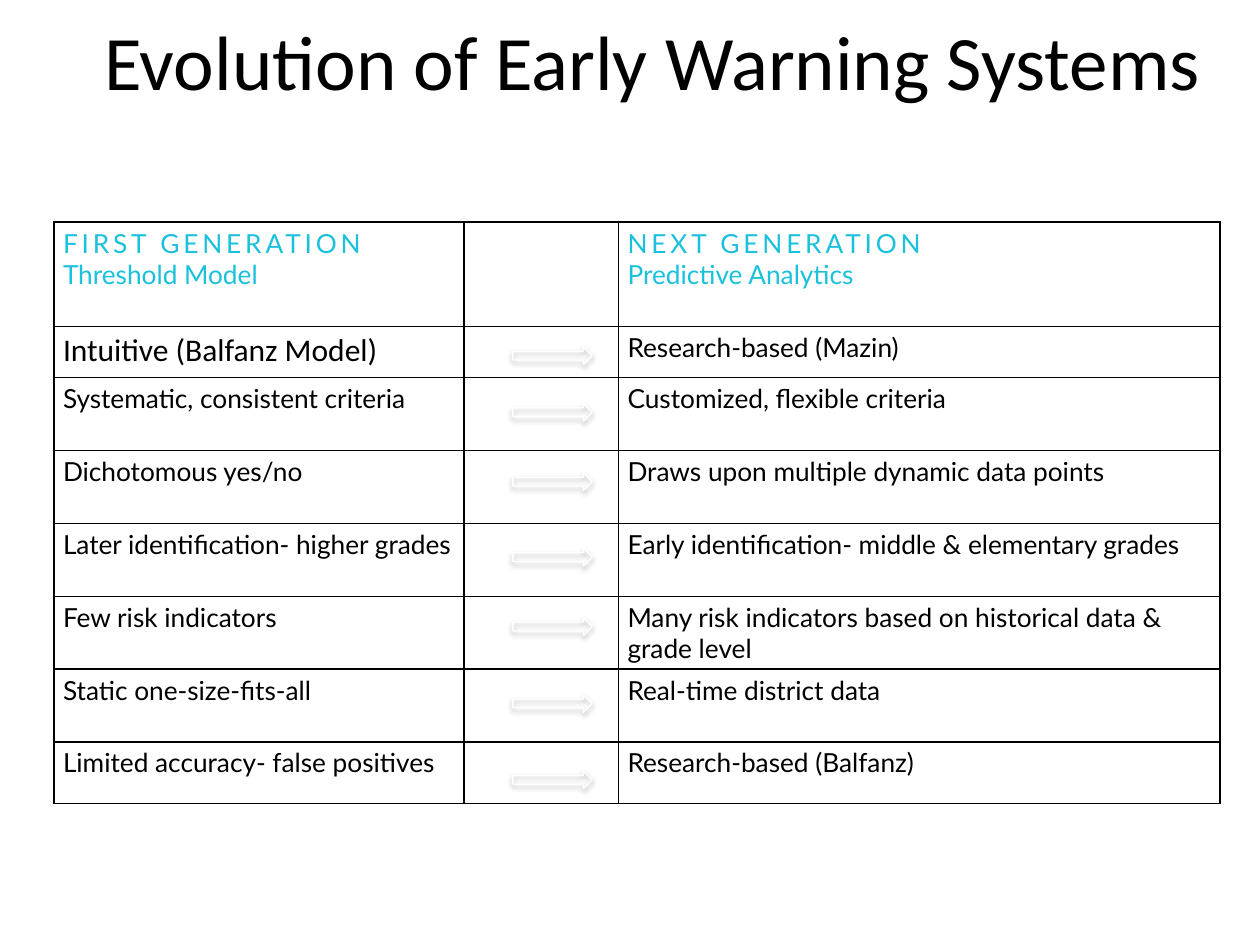
from lxml import etree
from pptx import Presentation
from pptx.dml.color import RGBColor
from pptx.enum.shapes import MSO_SHAPE
from pptx.enum.text import MSO_ANCHOR, PP_ALIGN
from pptx.oxml import parse_xml
from pptx.oxml.ns import nsdecls, qn
from pptx.util import Cm, Pt

ARROW = MSO_SHAPE.RIGHT_ARROW
CENTER = PP_ALIGN.CENTER
MIDDLE = MSO_ANCHOR.MIDDLE

TITLE = "Evolution of Early Warning Systems"
HEADINGS = [
    ("FIRST GENERATION", "Threshold Model"),
    ("NEXT GENERATION", "Predictive Analytics"),
]
# first generation, next generation, row height, arrow top
ROWS = [
    ("Intuitive (Balfanz Model)", "Research-based (Mazin)", 1.03, 6.99),
    ("Systematic, consistent criteria", "Customized, flexible criteria", 1.47, 8.13),
    ("Dichotomous yes/no", "Draws upon multiple dynamic data points", 1.47, 9.53),
    ("Later identification- higher grades",
     "Early identification- middle & elementary grades", 1.47, 11.05),
    ("Few risk indicators",
     "Many risk indicators based on historical data & grade level", 1.47, 12.45),
    ("Static one-size-fits-all", "Real-time district data", 1.47, 14),
    ("Limited accuracy- false positives", "Research-based (Balfanz)", 1.24, 15.54),
]
COLS = [8.26, 3.12, 12.12]
HEADER_HEIGHT = 2.1
TABLE_AT = (1.09, 4.48)
ARROW_LEFT, ARROW_SIZE = 10.34, (1.6, 0.36)

THEME = {
    "title": {"name": "Calibri", "size": Pt(44), "color": "000000"},
    "head": {"name": "Lato", "size": Pt(15), "color": "19C1DC"},
    "lead": {"name": "Calibri", "size": Pt(18), "color": "000000"},
    "body": {"name": "Lato", "size": Pt(15), "color": "000000"},
    "border": "000000",
    "arrow": "FFFFFF",
    "tracking": "220",
}
CELL = {"margin_left": Cm(0.18), "margin_right": Cm(0.18),
        "margin_top": Cm(0.1), "margin_bottom": Cm(0.1)}
SHADOW = (
    f'<a:effectLst {nsdecls("a")}><a:outerShdw blurRad="{Pt(3.1)}" dist="{Pt(1.8)}" '
    'dir="5400000" rotWithShape="0"><a:srgbClr val="000000"><a:alpha val="35000"/>'
    '</a:srgbClr></a:outerShdw></a:effectLst>'
)


def set_attrs(obj, values):
    for key, value in values.items():
        setattr(obj, key, value)


def add_run(p, text, style):
    r = p.add_run()
    r.text = text
    for key, value in THEME[style].items():
        if key == "color":
            r.font.color.rgb = RGBColor.from_string(value)
        else:
            setattr(r.font, key, value)
    return r


def add_borders(cell):
    pr = cell._tc.get_or_add_tcPr()
    for i, side in enumerate("LRTB"):
        ln = etree.Element(qn(f"a:ln{side}"), w=str(Pt(1)))
        fill = etree.SubElement(ln, qn("a:solidFill"))
        etree.SubElement(fill, qn("a:srgbClr"), val=THEME["border"])
        pr.insert(i, ln)


def add_title(s):
    tf = s.shapes.add_textbox(Cm(0.91), 0, Cm(24.49), Cm(2.39)).text_frame
    set_attrs(tf, {"word_wrap": True, "vertical_anchor": MIDDLE})
    p = tf.paragraphs[0]
    p.alignment = CENTER
    add_run(p, TITLE, "title")


def add_comparison(s):
    heights = [HEADER_HEIGHT] + [row[2] for row in ROWS]
    box = [Cm(v) for v in (*TABLE_AT, sum(COLS), sum(heights))]
    tbl = s.shapes.add_table(len(heights), len(COLS), *box).table
    set_attrs(tbl, {"first_row": False, "horz_banding": False})
    for col, width in zip(tbl.columns, COLS):
        col.width = Cm(width)
    for row, height in zip(tbl.rows, heights):
        row.height = Cm(height)
    for cell in tbl.iter_cells():
        set_attrs(cell, CELL)
        cell.fill.background()
        add_borders(cell)
    for col, (generation, model) in zip((0, 2), HEADINGS):
        tf = tbl.cell(0, col).text_frame
        r = add_run(tf.paragraphs[0], generation, "head")
        r.font._element.set("spc", THEME["tracking"])
        add_run(tf.add_paragraph(), model, "head")
    for i, row in enumerate(ROWS, 1):
        for col, text in zip((0, 2), row):
            style = "lead" if (i, col) == (1, 0) else "body"
            add_run(tbl.cell(i, col).text_frame.paragraphs[0], text, style)


def add_arrow(s, top):
    sp = s.shapes.add_shape(ARROW, *[Cm(v) for v in (ARROW_LEFT, top, *ARROW_SIZE)])
    sp.fill.background()
    sp.line.color.rgb = RGBColor.from_string(THEME["arrow"])
    sp.line.width = Pt(0.75)
    sp._element.spPr.append(parse_xml(SHADOW))


def main():
    """Build the slide comparing two generations of early warning systems."""
    prs = Presentation()
    set_attrs(prs, {"slide_width": Cm(25.4), "slide_height": Cm(19.05)})
    s = prs.slides.add_slide(prs.slide_layouts[6])
    add_title(s)
    add_comparison(s)
    for row in ROWS:
        add_arrow(s, row[3])
    prs.save("out.pptx")


if __name__ == "__main__":
    main()
